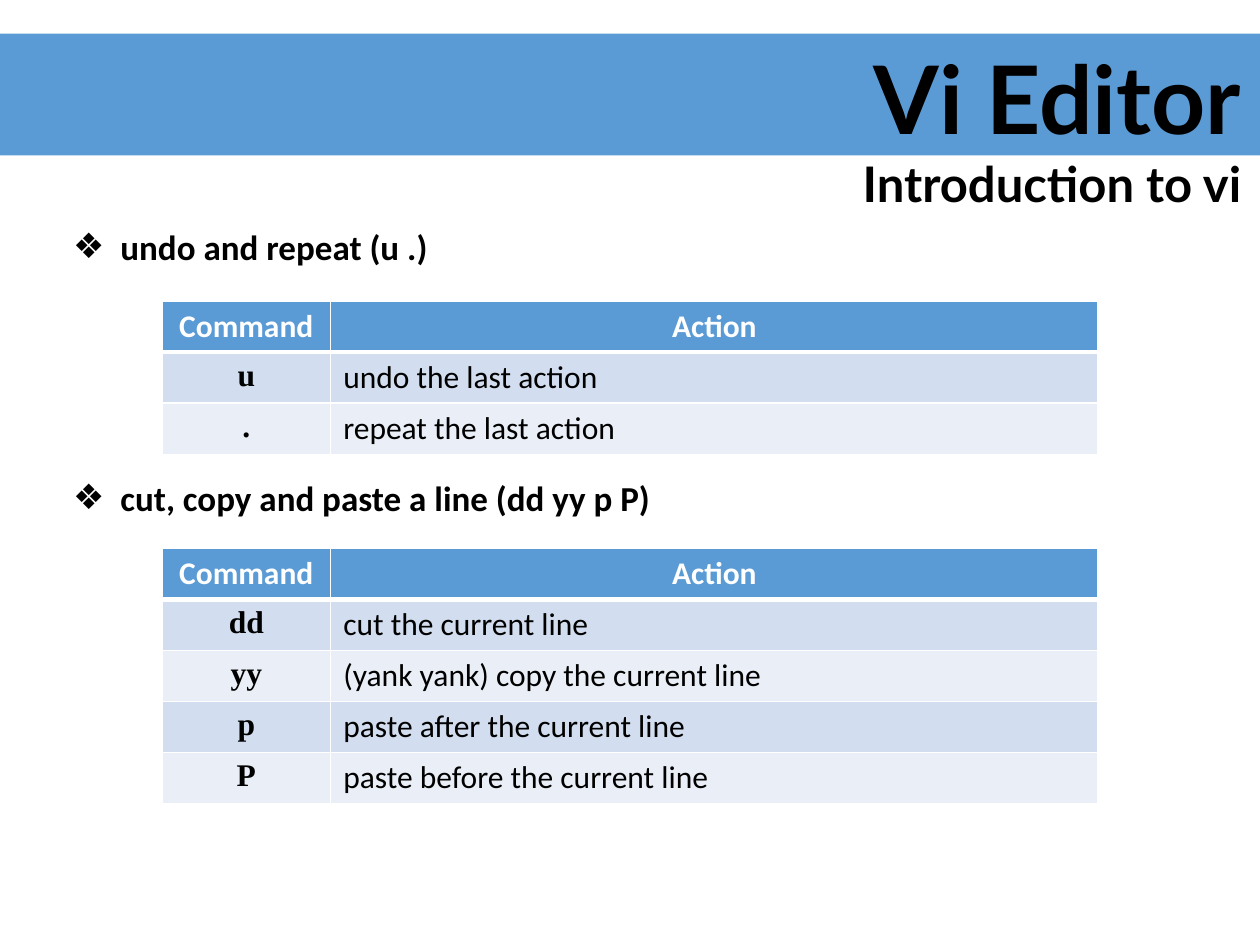
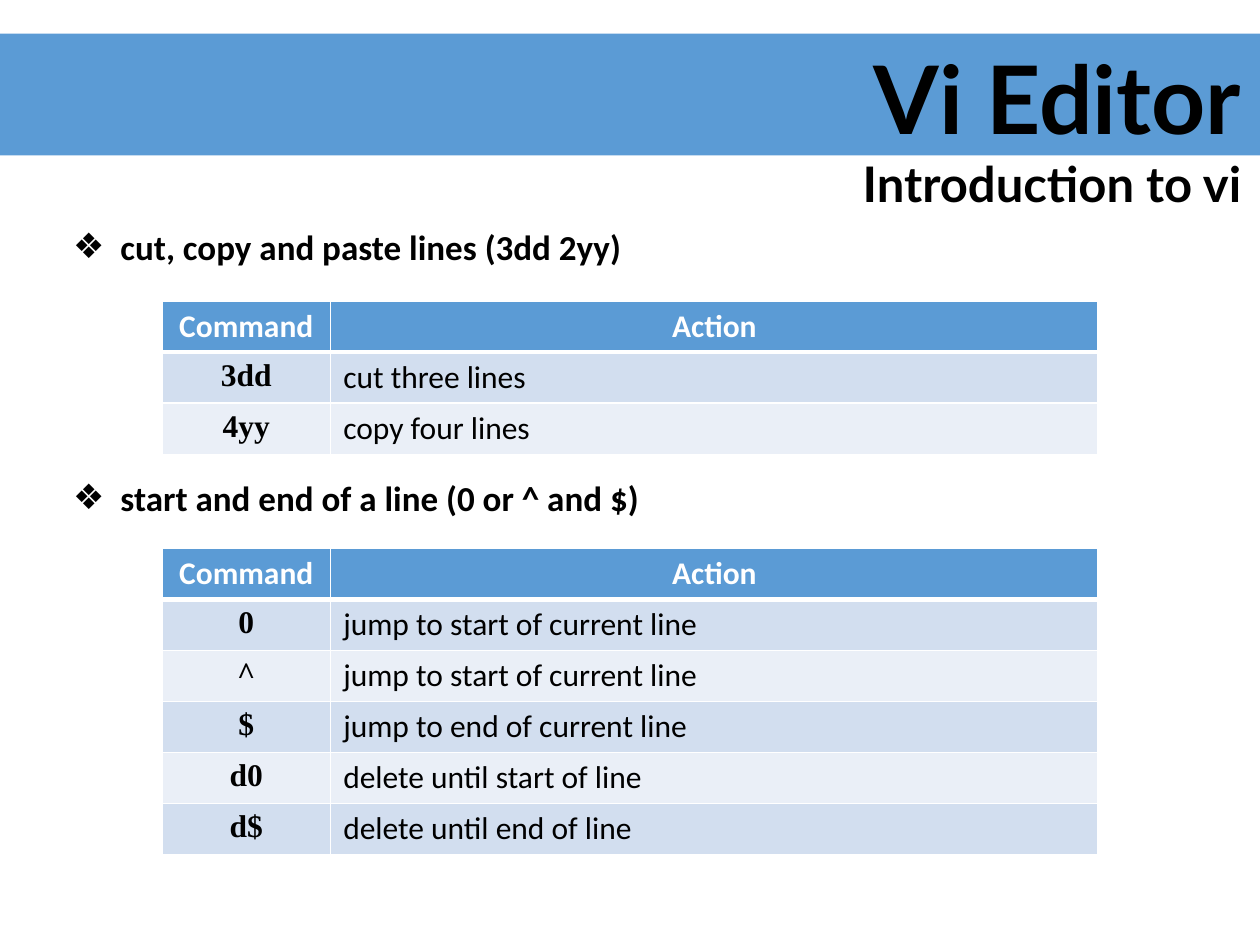
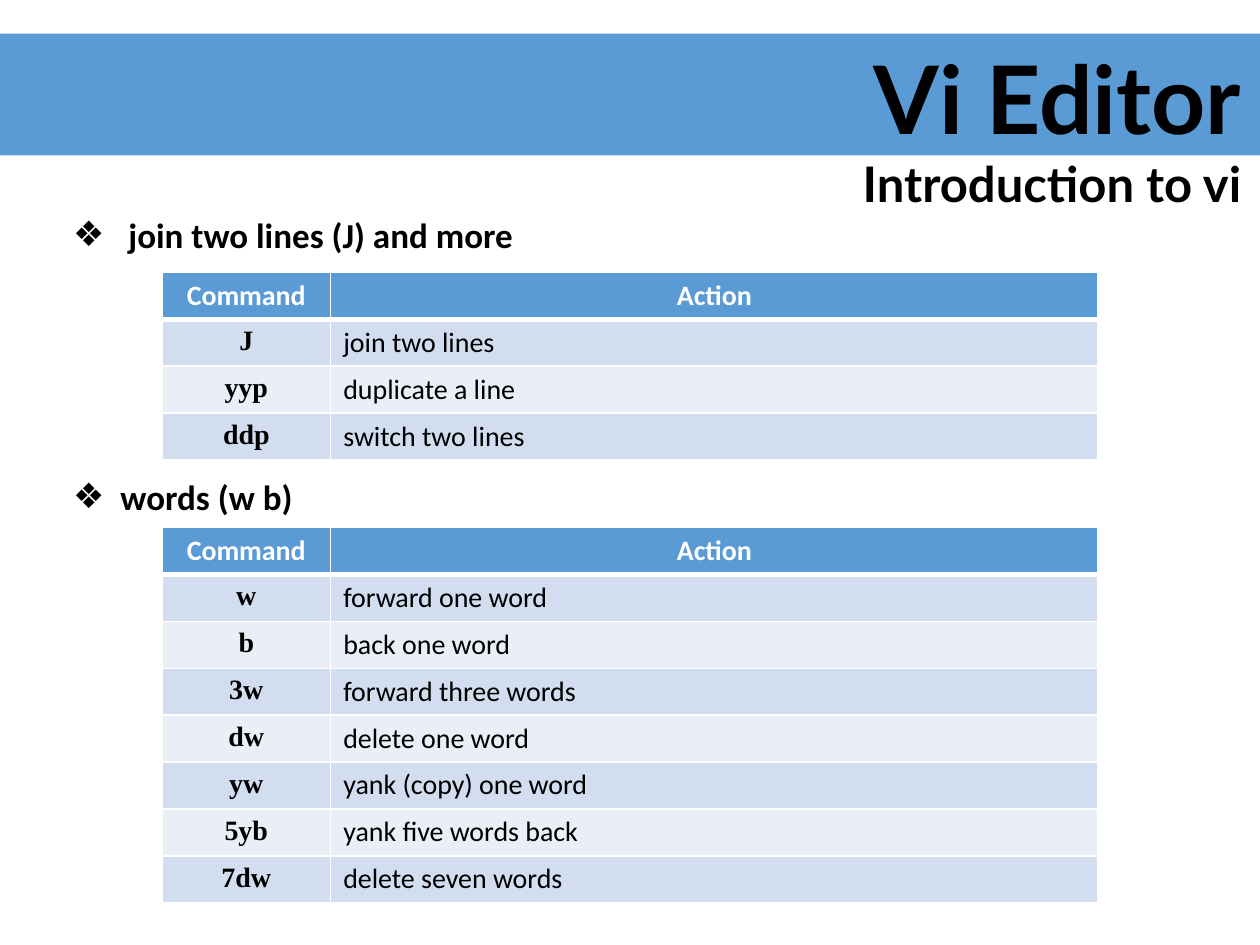
from lxml.etree import SubElement
from pptx import Presentation
from pptx.dml.color import RGBColor
from pptx.enum.shapes import MSO_SHAPE
from pptx.enum.text import MSO_ANCHOR, MSO_AUTO_SIZE, PP_ALIGN
from pptx.oxml.ns import qn
from pptx.util import Pt

COLORS = {
    "band": "5B9BD5",
    "odd_row": "D2DEEF",
    "even_row": "EAEFF7",
    "ink": "000000",
    "paper": "FFFFFF",
}
TITLE_FONT, BODY_FONT, COMMAND_FONT = "Lato", "Calibri", "Times New Roman"
SLIDE_SIZE = (720, 540)
BAND_BOX = (0, 19.2, 720, 69.6)
TITLE_BOX = (13.7, 19.2, 702.7, 106.3)
TABLE_LEFT = 92.5
COLUMN_WIDTHS = (96.5, 438.5)
HEADER = ("Command", "Action")
TOPIC_SIZE, TOPIC_LINE, TOPIC_INDENT = 20, 24.4, 27

ROOMY = {"topics_box": (34.6, 125.3, 672.5, 201), "topic_step": 144,
         "table_tops": (172, 313.2), "text_size": 18, "row_height": 29.2}
COMPACT = {"topics_box": (34.6, 118.5, 672.5, 183), "topic_step": 149.8,
           "table_tops": (155.7, 301.5), "text_size": 16, "row_height": 26.4}

SLIDES = [
    (ROOMY, {
        "undo and repeat (u .)": [
            ("u", "undo the last action"),
            (".", "repeat the last action"),
        ],
        "cut, copy and paste a line (dd yy p P)": [
            ("dd", "cut the current line"),
            ("yy", "(yank yank) copy the current line"),
            ("p", "paste after the current line"),
            ("P", "paste before the current line"),
        ],
    }),
    (ROOMY, {
        "cut, copy and paste lines (3dd 2yy)": [
            ("3dd", "cut three lines"),
            ("4yy", "copy four lines"),
        ],
        "start and end of a line (0 or ^ and $)": [
            ("0", "jump to start of current line"),
            ("^", "jump to start of current line"),
            ("$", "jump to end of current line"),
            ("d0", "delete until start of line"),
            ("d$", "delete until end of line"),
        ],
    }),
    (COMPACT, {
        " join two lines (J) and more": [
            ("J", "join two lines"),
            ("yyp", "duplicate a line"),
            ("ddp", "switch two lines"),
        ],
        "words (w b)": [
            ("w", "forward one word"),
            ("b", "back one word"),
            ("3w", "forward three words"),
            ("dw", "delete one word"),
            ("yw", "yank (copy) one word"),
            ("5yb", "yank five words back"),
            ("7dw", "delete seven words"),
        ],
    }),
]


def rgb(name):
    return RGBColor.from_string(COLORS[name])


def style_text(paragraph, font_name, size, color="ink", bold=True,
               align=PP_ALIGN.LEFT):
    paragraph.alignment = align
    for run in paragraph.runs:
        font = run.font
        font.name, font.size, font.bold = font_name, Pt(size), bold
        font.color.rgb = rgb(color)


def place(placeholder, box):
    """Move a placeholder to box and let its text start at the top, unscaled."""
    placeholder.left, placeholder.top, placeholder.width, placeholder.height = map(Pt, box)
    frame = placeholder.text_frame
    frame.auto_size = MSO_AUTO_SIZE.NONE
    frame.vertical_anchor = MSO_ANCHOR.TOP
    return frame


def add_heading(slide):
    band = slide.shapes.add_shape(MSO_SHAPE.RECTANGLE, *map(Pt, BAND_BOX))
    band.shadow.inherit = False
    band.fill.solid()
    band.fill.fore_color.rgb = rgb("band")
    band.line.fill.background()
    slide.shapes._spTree.insert(2, band._element)  # behind the title

    heading = place(slide.shapes.title, TITLE_BOX)
    heading.text = "Vi Editor\nIntroduction to vi"
    for paragraph, size in zip(heading.paragraphs, (54, 28)):
        style_text(paragraph, TITLE_FONT, size, align=PP_ALIGN.RIGHT)


def set_bullet(paragraph):
    properties = paragraph._p.get_or_add_pPr()
    properties.set("marL", str(Pt(TOPIC_INDENT)))
    properties.set("indent", str(-Pt(TOPIC_INDENT)))
    SubElement(properties, qn("a:buFont"), typeface="Arial")
    SubElement(properties, qn("a:buChar"), char="❖")


def add_topics(slide, topics, box, step):
    frame = place(slide.placeholders[1], box)
    frame.text = "\n".join(topics)
    for index, paragraph in enumerate(frame.paragraphs):
        style_text(paragraph, BODY_FONT, TOPIC_SIZE)
        paragraph.space_before = Pt(step - TOPIC_LINE if index else 0)
        set_bullet(paragraph)


def set_borders(cell, row):
    """White rules, with a thick one between the header and the first row."""
    widths = {"L": 1, "R": 1, "T": 3 if row == 1 else 1, "B": 3 if row == 0 else 1}
    properties = cell._tc.get_or_add_tcPr()
    for side, width in widths.items():
        rule = SubElement(properties, qn(f"a:ln{side}"), w=str(Pt(width)))
        fill = SubElement(rule, qn("a:solidFill"))
        SubElement(fill, qn("a:srgbClr"), val=COLORS["paper"])


def add_command_table(slide, commands, top, text_size, row_height):
    rows = [HEADER, *commands]
    table = slide.shapes.add_table(
        len(rows), len(HEADER), Pt(TABLE_LEFT), Pt(top),
        Pt(sum(COLUMN_WIDTHS)), Pt(row_height * len(rows))).table
    for column, width in zip(table.columns, COLUMN_WIDTHS):
        column.width = Pt(width)
    for r, entries in enumerate(rows):
        table.rows[r].height = Pt(row_height)
        row_color = "band" if r == 0 else "odd_row" if r % 2 else "even_row"
        for c, entry in enumerate(entries):
            cell = table.cell(r, c)
            set_borders(cell, r)
            cell.fill.solid()
            cell.fill.fore_color.rgb = rgb(row_color)
            cell.text_frame.text = entry
            is_header, is_command = r == 0, c == 0
            emphasised = is_header or is_command
            style_text(
                cell.text_frame.paragraphs[0],
                COMMAND_FONT if is_command and not is_header else BODY_FONT,
                text_size,
                color="paper" if is_header else "ink",
                bold=emphasised,
                align=PP_ALIGN.CENTER if emphasised else PP_ALIGN.LEFT)


def add_command_slide(prs, layout, topics):
    slide = prs.slides.add_slide(prs.slide_layouts[1])
    add_heading(slide)
    add_topics(slide, topics, layout["topics_box"], layout["topic_step"])
    for commands, top in zip(topics.values(), layout["table_tops"]):
        add_command_table(slide, commands, top, layout["text_size"], layout["row_height"])


def main():
    prs = Presentation()
    prs.slide_width, prs.slide_height = map(Pt, SLIDE_SIZE)
    for layout, topics in SLIDES:
        add_command_slide(prs, layout, topics)
    prs.save("out.pptx")


if __name__ == "__main__":
    main()
